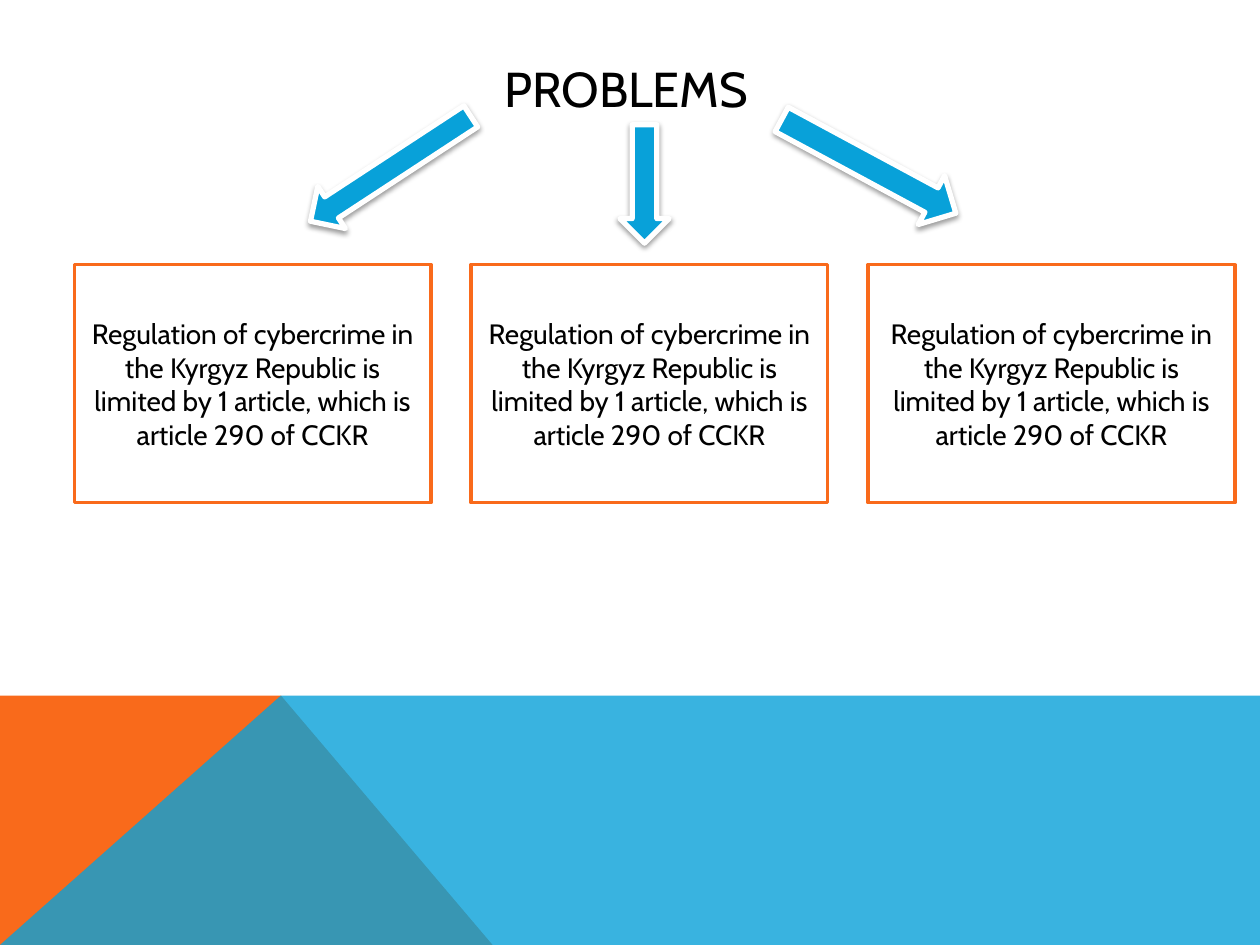
"""Build a slide that splits a heading into three problem boxes."""
from typing import NamedTuple

import lxml.etree
import pptx
import pptx.dml.color
import pptx.enum.shapes
import pptx.enum.text
import pptx.oxml.ns
import pptx.util

Inches = pptx.util.Inches
Pt = pptx.util.Pt
Preset = pptx.enum.shapes.MSO_SHAPE
Align = pptx.enum.text.PP_ALIGN
Anchor = pptx.enum.text.MSO_ANCHOR

FONT = "Cabin"
BLACK, WHITE, BLUE, ORANGE = "000000", "FFFFFF", "08A1D9", "F96A1B"
PROBLEM = (
    "Regulation of cybercrime in the Kyrgyz Republic is limited by 1 article, "
    "which is article 290 of CCKR"
)


class Band(NamedTuple):
    points: list[tuple[float, float]]
    color: str
    opacity: int


class Arrow(NamedTuple):
    preset: Preset
    left: float
    top: float
    width: float
    height: float
    rotation: float


class Box(NamedTuple):
    left: float
    width: float
    text: str


BANDS = [
    Band([(0, 7.5), (0, 5.52), (2.23, 5.52), (3.91, 7.5)], ORANGE, 100),
    Band([(0, 7.5), (2.23, 5.52), (10, 5.52), (10, 7.5)], BLUE, 80),
]
ARROWS = [
    Arrow(Preset.LEFT_ARROW, 2.34, 1.14, 1.52, 0.4, 326.8),
    Arrow(Preset.DOWN_ARROW, 4.92, 0.99, 0.39, 0.94, 0),
    Arrow(Preset.RIGHT_ARROW, 6.11, 1.1, 1.57, 0.44, 28.3),
]
BOX_LEFT, BOX_STEP, BOX_TOP, BOX_HEIGHT = 0.59, 3.15, 2.1, 1.89
BOXES = [
    Box(BOX_LEFT + BOX_STEP * column, width, PROBLEM)
    for column, width in enumerate((2.83, 2.83, 2.91))
]


def rgb(color: str) -> pptx.dml.color.RGBColor:
    return pptx.dml.color.RGBColor.from_string(color)


def add_child(parent, tag: str, **attributes: str):
    return lxml.etree.SubElement(parent, pptx.oxml.ns.qn(tag), attributes)


def paint(shape, fill: str, line: str | None = None, line_width: float = 0) -> None:
    shape.shadow.inherit = False
    shape.fill.solid()
    shape.fill.fore_color.rgb = rgb(fill)
    if line is None:
        shape.line.fill.background()
    else:
        shape.line.color.rgb = rgb(line)
        shape.line.width = Pt(line_width)


def write(shape, text: str, size: float) -> None:
    frame = shape.text_frame
    frame.text = text
    frame.word_wrap = True
    frame.vertical_anchor = Anchor.MIDDLE
    paragraph = frame.paragraphs[0]
    paragraph.alignment = Align.CENTER
    font = paragraph.runs[0].font
    font.name, font.size = FONT, Pt(size)
    font.color.rgb = rgb(BLACK)


def draw_band(slide, band: Band) -> None:
    corners = [(Inches(x), Inches(y)) for x, y in band.points]
    outline = slide.shapes.build_freeform(*corners[0])
    outline.add_line_segments(corners[1:], close=True)
    shape = outline.convert_to_shape()
    paint(shape, band.color)
    if band.opacity < 100:
        tint = shape.fill._xPr.find(".//" + pptx.oxml.ns.qn("a:srgbClr"))
        add_child(tint, "a:alpha", val=str(band.opacity * 1000))


def draw_arrow(slide, arrow: Arrow) -> None:
    shape = slide.shapes.add_shape(
        arrow.preset, Inches(arrow.left), Inches(arrow.top),
        Inches(arrow.width), Inches(arrow.height),
    )
    shape.rotation = arrow.rotation
    paint(shape, BLUE, WHITE, 3)
    effects = shape._element.spPr.find(pptx.oxml.ns.qn("a:effectLst"))
    shadow = add_child(
        effects, "a:outerShdw", blurRad=str(Pt(3.1)), dist=str(Pt(1.6)),
        dir=str(90 * 60000), rotWithShape="0",
    )
    tint = add_child(shadow, "a:srgbClr", val=BLACK)
    add_child(tint, "a:alpha", val="38000")


def draw_box(slide, box: Box) -> None:
    shape = slide.shapes.add_shape(
        Preset.RECTANGLE, Inches(box.left), Inches(BOX_TOP),
        Inches(box.width), Inches(BOX_HEIGHT),
    )
    paint(shape, WHITE, ORANGE, 2)
    write(shape, box.text, 16)


def main() -> None:
    deck = pptx.Presentation()
    deck.slide_width, deck.slide_height = Inches(10), Inches(7.5)
    slide = deck.slides.add_slide(deck.slide_layouts[5])

    heading = slide.shapes.title
    heading.left, heading.top = Inches(0.9), Inches(0.4)
    heading.width, heading.height = Inches(8.22), Inches(0.6)
    write(heading, "PROBLEMS", 28)
    heading.text_frame.margin_right = Inches(0.18)

    for band in BANDS:
        draw_band(slide, band)
    for arrow in ARROWS:
        draw_arrow(slide, arrow)
    for box in BOXES:
        draw_box(slide, box)
    deck.save("out.pptx")


if __name__ == "__main__":
    main()
